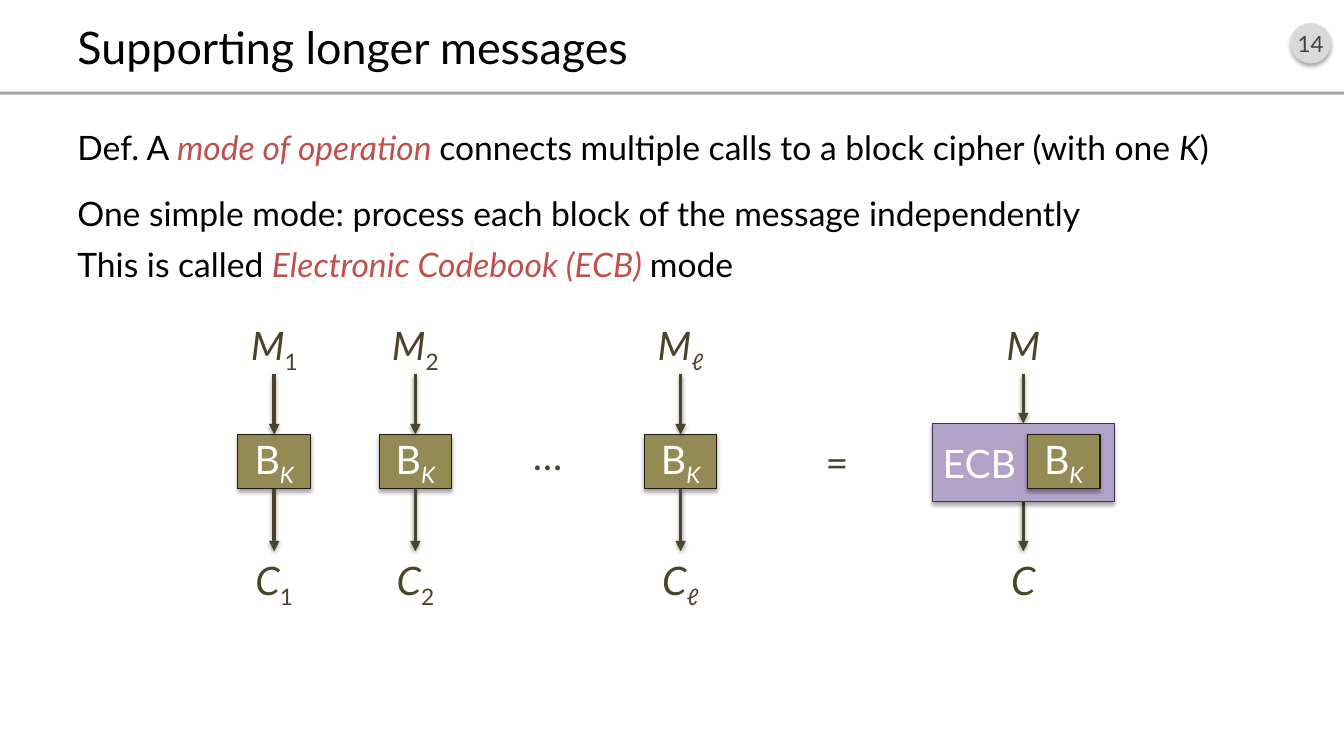
from lxml import etree
from pptx import Presentation
from pptx import util as u
from pptx.dml.color import RGBColor
from pptx.enum import shapes, text
from pptx.oxml import parse_xml
from pptx.oxml.ns import nsdecls, qn

THEME = {
    "font": "Lato",
    "black": "000000", "accent": "C0504D", "white": "FFFFFF", "ink": "4A452A",
    "rule": "A6A6A6", "badge": "D9D9D9", "number": "404040",
    "cipher": "948A54", "cipher_edge": "1E1C11", "mode": "B3A2C7", "mode_edge": "403152",
    "title_size": 32, "body_size": 24, "label_size": 28, "number_size": 16,
    "edge": 0.75, "arrow": 2.5,
}

TITLE = "Supporting longer messages"
PAGE = "14"
BODY = [
    (8, [("Def. A ", ""), ("mode of operation ", "term"),
         ("connects multiple calls to a block cipher (with one ", ""), ("K", "italic"), (")", "")]),
    (18, [("One simple mode: process each block of the message independently", "")]),
    (8, [("This is called ", ""), ("Electronic Codebook (ECB) ", "term"), ("mode", "")]),
]
BLOCKS = [("1", 2.72), ("2", 4.12), ("ℓ", 6.75)]
SYMBOLS = [("…", 5.43, 4.23), ("=", 8.3, 4.3)]
CIPHER = [("B", ""), ("K", "italic sub")]
MODE = "ECB"

MODE_X, MODE_CIPHER_X = 10.15, 10.55
PLAIN_Y, ARROW_Y, CIPHER_Y, OUTPUT_Y = 3.14, 3.71, 4.31, 5.47
LABEL_W, LABEL_H = 0.88, 0.57
CIPHER_W, CIPHER_H = 0.72, 0.54
MODE_W, MODE_H, MODE_Y = 1.8, 0.78, 4.2

deck = Presentation()
deck.slide_width, deck.slide_height = u.Inches(13.33), u.Inches(7.5)
slide = deck.slides.add_slide(deck.slide_layouts[6])


def rgb(name):
    return RGBColor.from_string(THEME[name])


def apply(target, values):
    for attribute, value in values.items():
        setattr(target, attribute, value)


def cast_shadow(part, opacity=35, distance=1.8):
    part._element.spPr.append(parse_xml(
        f'<a:effectLst {nsdecls("a")}><a:outerShdw blurRad="{u.Pt(3.1)}" '
        f'dist="{u.Pt(distance)}" dir="5400000" rotWithShape="0"><a:srgbClr val="000000">'
        f'<a:alpha val="{opacity * 1000}"/></a:srgbClr></a:outerShdw></a:effectLst>'))


def write(paragraph, pieces, size, color):
    for words, style in pieces:
        run = paragraph.add_run()
        run.text = words
        apply(run.font, {"name": THEME["font"], "size": u.Pt(THEME[size]),
                         "italic": "italic" in style or style == "term"})
        run.font.color.rgb = rgb("accent" if style == "term" else color)
        if "sub" in style:
            run.font._element.set("baseline", "-25000")


def text_box(left, top, width, height, **frame_format):
    frame = slide.shapes.add_textbox(*map(u.Inches, (left, top, width, height))).text_frame
    apply(frame, {"word_wrap": True, **frame_format})
    return frame


def label(center, top, pieces):
    paragraph = text_box(center - LABEL_W / 2, top, LABEL_W, LABEL_H).paragraphs[0]
    paragraph.alignment = text.PP_ALIGN.CENTER
    write(paragraph, pieces, "label_size", "ink")


def solid(kind, left, top, width, height, fill, edge=None, shadow=True):
    part = slide.shapes.add_shape(kind, *map(u.Inches, (left, top, width, height)))
    part.fill.solid()
    part.fill.fore_color.rgb = rgb(fill)
    if edge:
        part.line.color.rgb = rgb(edge)
        part.line.width = u.Pt(THEME["edge"])
    else:
        part.line.fill.background()
    if shadow:
        cast_shadow(part)
    else:
        part.shadow.inherit = False
    part.text_frame.vertical_anchor = text.MSO_ANCHOR.MIDDLE
    return part.text_frame


def arrow(center, top, bottom):
    line = slide.shapes.add_connector(
        shapes.MSO_CONNECTOR.STRAIGHT, *map(u.Inches, (center, top, center, bottom)))
    line.line.color.rgb = rgb("ink")
    line.line.width = u.Pt(THEME["arrow"])
    etree.SubElement(line.line._get_or_add_ln(), qn("a:tailEnd"), type="triangle")
    cast_shadow(line, opacity=38, distance=1.6)


def flow(center, box_top, box_height, subscript):
    arrow(center, ARROW_Y, box_top)
    arrow(center, box_top + box_height, OUTPUT_Y)
    for letter, top in (("M", PLAIN_Y), ("C", OUTPUT_Y)):
        label(center, top, [(letter, "italic")] + subscript)


def cipher(center):
    frame = solid(shapes.MSO_SHAPE.RECTANGLE, center - CIPHER_W / 2, CIPHER_Y,
                  CIPHER_W, CIPHER_H, "cipher", "cipher_edge")
    frame.paragraphs[0].alignment = text.PP_ALIGN.CENTER
    write(frame.paragraphs[0], CIPHER, "label_size", "white")


badge = solid(shapes.MSO_SHAPE.OVAL, 12.8, 0.23, 0.4, 0.4, "badge")
apply(badge, {"margin_left": 0, "margin_right": 0, "word_wrap": False})
badge.paragraphs[0].alignment = text.PP_ALIGN.CENTER
write(badge.paragraphs[0], [(PAGE, "")], "number_size", "number")
solid(shapes.MSO_SHAPE.RECTANGLE, 0, 0.91, 13.33, 0.03, "rule", shadow=False)

title = text_box(0.67, 0.16, 12, 0.6, vertical_anchor=text.MSO_ANCHOR.MIDDLE)
write(title.paragraphs[0], [(TITLE, "")], "title_size", "black")

body = text_box(0.67, 1.21, 12, 5.75)
for index, (space, pieces) in enumerate(BODY):
    paragraph = body.add_paragraph() if index else body.paragraphs[0]
    paragraph.space_before = u.Pt(space)
    write(paragraph, pieces, "body_size", "black")

for subscript, center in BLOCKS:
    cipher(center)
    flow(center, CIPHER_Y, CIPHER_H, [(subscript, "sub")])

for symbol, center, top in SYMBOLS:
    label(center, top, [(symbol, "")])

flow(MODE_X, MODE_Y, MODE_H, [])
mode = solid(shapes.MSO_SHAPE.RECTANGLE, MODE_X - MODE_W / 2, MODE_Y,
             MODE_W, MODE_H, "mode", "mode_edge")
mode.paragraphs[0].alignment = text.PP_ALIGN.LEFT
write(mode.paragraphs[0], [(MODE, "")], "label_size", "white")
cipher(MODE_CIPHER_X)

deck.save("out.pptx")
